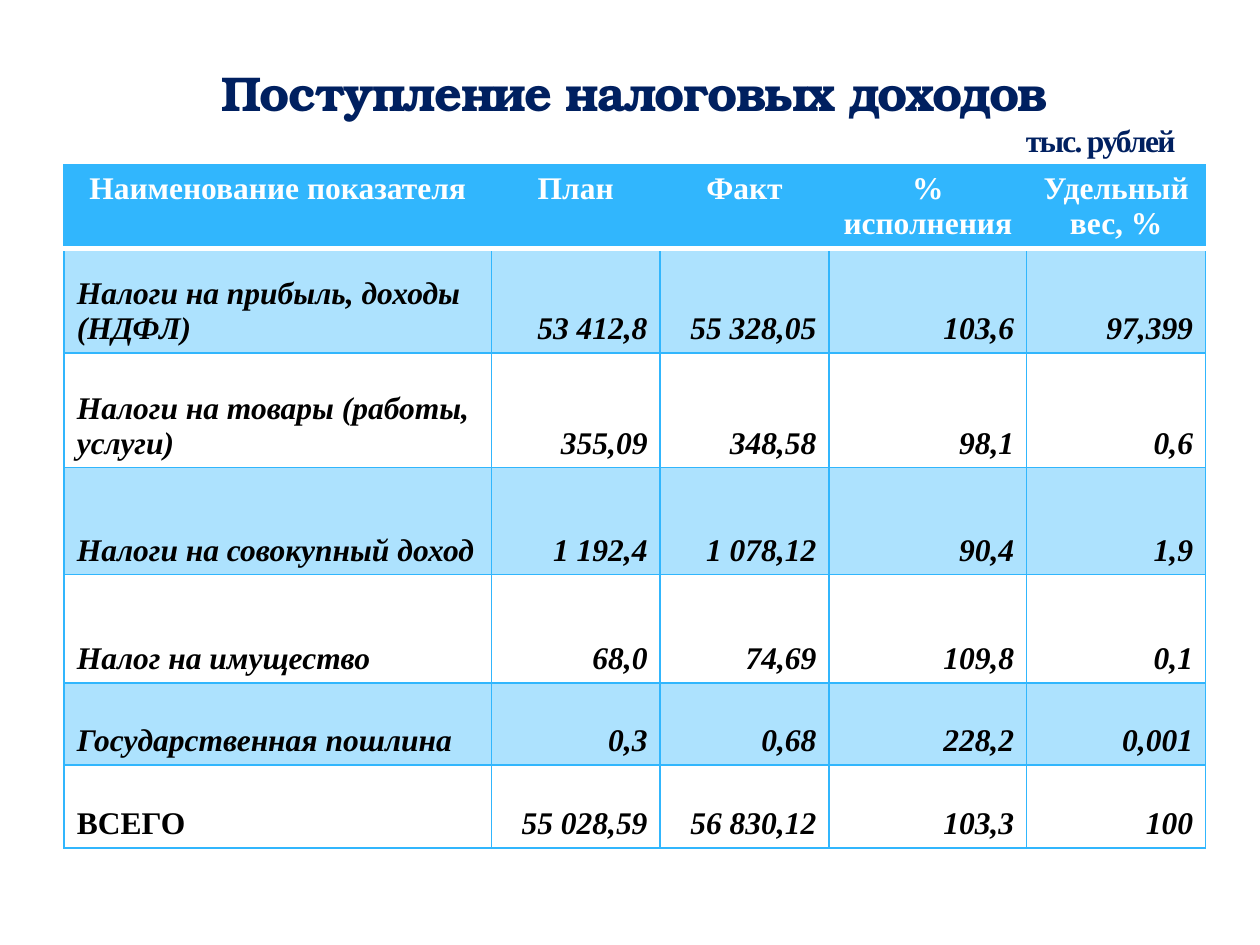
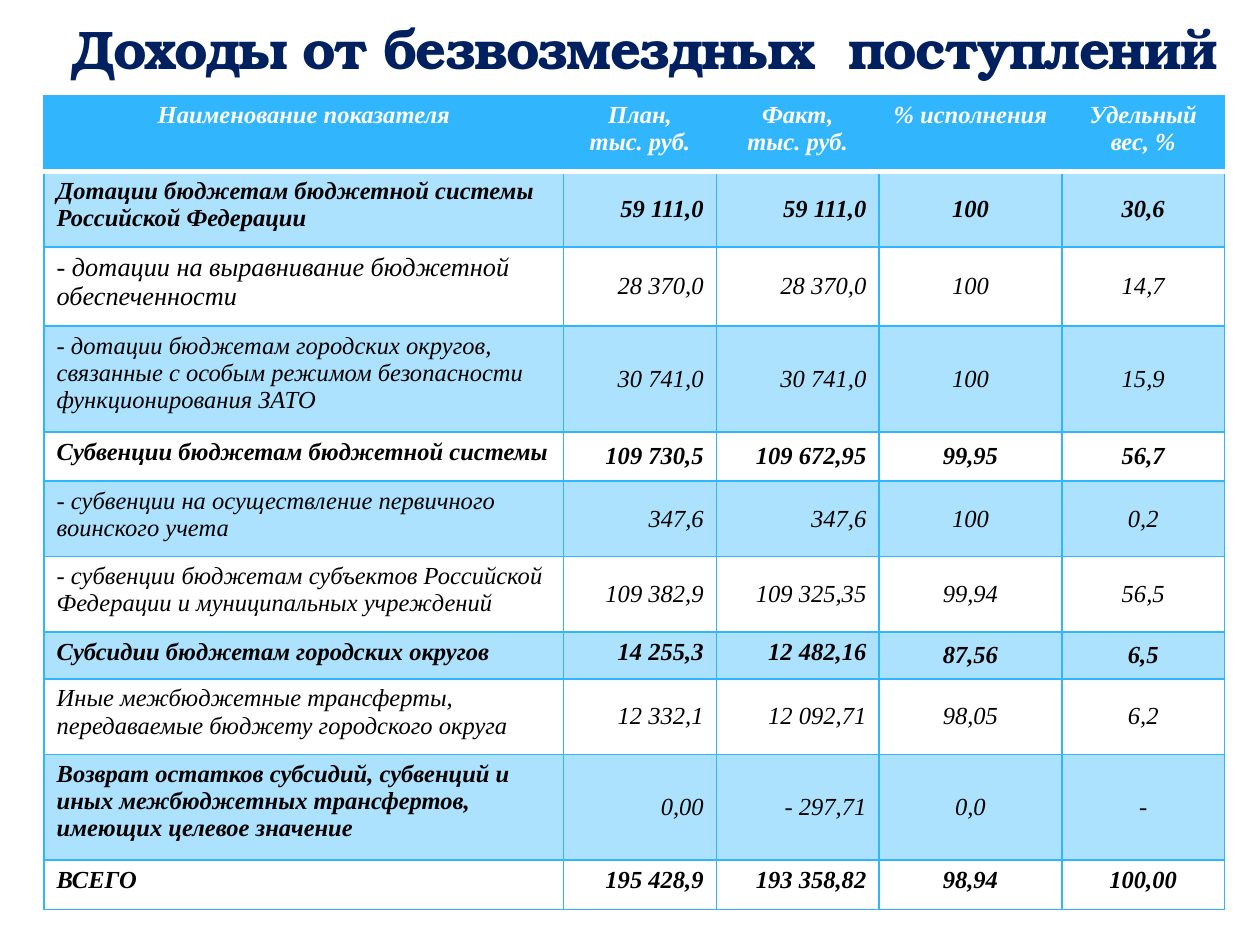
from lxml.etree import SubElement
from pptx import Presentation
from pptx.dml.color import RGBColor
from pptx.enum.text import MSO_ANCHOR, MSO_AUTO_SIZE, PP_ALIGN
from pptx.oxml import parse_xml
from pptx.oxml.ns import nsdecls, qn
from pptx.util import Inches, Pt

# Shared look
SLIDE_WIDTH, SLIDE_HEIGHT = Inches(10), Inches(7.5)
TITLE_ONLY = 5
TITLE_FONT, BODY_FONT = "TeX Gyre Bonum", "Times New Roman"
NAVY = RGBColor(0x00, 0x20, 0x60)
BLUE = RGBColor(0x31, 0xB6, 0xFD)
PALE_BLUE = RGBColor(0xAD, 0xE2, 0xFE)
GLOW = RGBColor(0xAF, 0xCC, 0xDE)
WHITE = RGBColor(0xFF, 0xFF, 0xFF)
BLACK = RGBColor(0x00, 0x00, 0x00)

# Tax revenue: label, plan, fact, execution, share
TAX_HEADER = ("Наименование показателя", "План", "Факт", "% исполнения", "Удельный вес, %")
TAX_ROWS = [
    ("Налоги на прибыль, доходы (НДФЛ)", "53 412,8", "55 328,05", "103,6", "97,399"),
    ("Налоги на товары (работы, услуги)", "355,09", "348,58", "98,1", "0,6"),
    ("Налоги на совокупный доход", "1 192,4", "1 078,12", "90,4", "1,9"),
    ("Налог на имущество", "68,0", "74,69", "109,8", "0,1"),
    ("Государственная пошлина", "0,3", "0,68", "228,2", "0,001"),
    ("ВСЕГО", "55 028,59", "56 830,12", "103,3", "100"),
]
TAX_COLUMN_WEIGHTS = (339, 134, 134, 157, 142)
TAX_ROW_WEIGHTS = (66, 83, 91, 85, 86, 65, 66)

# Grants and transfers
GRANT_HEADER = ("Наименование показателя", "План,\nтыс. руб.", "Факт,\nтыс. руб.",
                "% исполнения", "Удельный вес, %")
GRANT_ROWS = [
    ("Дотации бюджетам бюджетной системы Российской Федерации",
     "59 111,0", "59 111,0", "100", "30,6"),
    ("- дотации на выравнивание бюджетной обеспеченности",
     "28 370,0", "28 370,0", "100", "14,7"),
    ("- дотации бюджетам городских округов, связанные с особым режимом "
     "безопасности функционирования ЗАТО", "30 741,0", "30 741,0", "100", "15,9"),
    ("Субвенции бюджетам бюджетной системы",
     "109 730,5", "109 672,95", "99,95", "56,7"),
    ("- субвенции на осуществление первичного воинского учета",
     "347,6", "347,6", "100", "0,2"),
    ("- субвенции бюджетам субъектов Российской Федерации и муниципальных учреждений",
     "109 382,9", "109 325,35", "99,94", "56,5"),
    ("Субсидии бюджетам городских округов",
     "14 255,3", "12 482,16", "87,56", "6,5"),
    ("Иные межбюджетные трансферты, передаваемые бюджету городского округа",
     "12 332,1", "12 092,71", "98,05", "6,2"),
    ("Возврат остатков субсидий, субвенций и иных межбюджетных трансфертов, "
     "имеющих целевое значение", "0,00", "- 297,71", "0,0", "-"),
    ("ВСЕГО", "195 428,9", "193 358,82", "98,94", "100,00"),
]
GRANT_COLUMN_WEIGHTS = (412, 121, 129, 145, 129)
GRANT_ROW_WEIGHTS = (60, 60, 63, 84, 39, 60, 60, 37, 60, 84, 39)
GROUP_ROWS = (1, 4, 7, 10)
EQUALISATION_ROW, SUBSIDY_ROW, REFUND_ROW, GRANT_TOTAL_ROW = 2, 7, 9, 10


def across(percent):
    return int(SLIDE_WIDTH * percent / 100)


def down(percent):
    return int(SLIDE_HEIGHT * percent / 100)


def format_spans(para, size, font, color, bold=True, italic=False):
    for span in para.runs:
        span.font.size = Pt(size)
        span.font.name = font
        span.font.color.rgb = color
        span.font.bold = bold
        span.font.italic = italic


def tighten(para):
    """Narrow the letter spacing and add a faint hairline outline."""
    for span in para.runs:
        properties = span.font._element
        properties.set("spc", "-100")
        properties.insert(0, parse_xml(
            f'<a:ln {nsdecls("a")} w="3175"><a:solidFill><a:srgbClr val="{GLOW}">'
            '<a:alpha val="25000"/></a:srgbClr></a:solidFill></a:ln>'))


def set_title(slide, left, width, height, lines, anchor, side_margin=0):
    """Fill the title with lines of (text, size, font, alignment)."""
    box = slide.shapes.title
    box.left, box.top, box.width, box.height = left, 0, width, height
    frame = box.text_frame
    frame.text = "\n".join(line[0] for line in lines)
    frame.auto_size = MSO_AUTO_SIZE.NONE
    frame.word_wrap = True
    frame.vertical_anchor = anchor
    frame.margin_left = frame.margin_right = side_margin
    for para, (_, size, font, alignment) in zip(frame.paragraphs, lines):
        para.alignment = alignment
        format_spans(para, size, font, NAVY)
        tighten(para)


def set_border(cell, side, color, points):
    line = SubElement(cell._tc.get_or_add_tcPr(), qn(f"a:{side}"), w=str(Pt(points)))
    fill = SubElement(line, qn("a:solidFill"))
    SubElement(fill, qn("a:srgbClr"), val=str(color))


def frame_cell(cell, row):
    """Draw blue borders, with a thick white rule under the header."""
    white_side = {0: "lnB", 1: "lnT"}.get(row)
    for side in ("lnL", "lnR", "lnT", "lnB"):
        if side == white_side:
            set_border(cell, side, WHITE, 3)
        else:
            set_border(cell, side, BLUE, 1)


def fill_cell(cell, row):
    if row % 2 or row == 0:
        cell.fill.solid()
        cell.fill.fore_color.rgb = PALE_BLUE if row else BLUE
    else:
        cell.fill.background()


def add_budget_table(slide, area, column_weights, row_weights, rows, style_of):
    """Add a table; style_of(row, column) gives alignment, anchor and font settings."""
    left, top, width, height = area
    table = slide.shapes.add_table(len(rows), len(column_weights), *area).table
    for column, weight in zip(table.columns, column_weights):
        column.width = int(width * weight / sum(column_weights))
    for line, weight in zip(table.rows, row_weights):
        line.height = int(height * weight / sum(row_weights))
    for row, values in enumerate(rows):
        for column, value in enumerate(values):
            cell = table.cell(row, column)
            cell.text = value
            frame_cell(cell, row)
            fill_cell(cell, row)
            alignment, anchor, size, bold, italic = style_of(row, column)
            cell.vertical_anchor = anchor
            for para in cell.text_frame.paragraphs:
                para.alignment = alignment
                format_spans(para, size, BODY_FONT, BLACK if row else WHITE, bold, italic)


def tax_style(row, column):
    if row == 0:
        return PP_ALIGN.CENTER, MSO_ANCHOR.TOP, 18, True, False
    alignment = PP_ALIGN.RIGHT if column else PP_ALIGN.LEFT
    is_total_label = row == len(TAX_ROWS) and column == 0
    return alignment, MSO_ANCHOR.BOTTOM, 18, True, not is_total_label


def grant_style(row, column):
    if row == 0:
        return PP_ALIGN.CENTER, MSO_ANCHOR.TOP, 14, True, True
    alignment = (PP_ALIGN.LEFT, PP_ALIGN.RIGHT, PP_ALIGN.RIGHT,
                 PP_ALIGN.CENTER, PP_ALIGN.CENTER)[column]
    at_top = column == 0 or row == GRANT_TOTAL_ROW or (row == SUBSIDY_ROW and column < 3)
    anchor = MSO_ANCHOR.TOP if at_top else MSO_ANCHOR.MIDDLE
    size = 15 if (row, column) == (EQUALISATION_ROW, 0) else 14
    bold = row in GROUP_ROWS or (row, column) == (REFUND_ROW, 0)
    return alignment, anchor, size, bold, True


def add_tax_slide(deck):
    slide = deck.slides.add_slide(deck.slide_layouts[TITLE_ONLY])
    left, width, top = across(5.1), across(90.6), down(17.47)
    add_budget_table(slide, (left, top, width, down(72.27)), TAX_COLUMN_WEIGHTS,
                     TAX_ROW_WEIGHTS, [TAX_HEADER] + TAX_ROWS, tax_style)
    set_title(slide, left, width, top, [
        ("Поступление налоговых доходов", 27.9, TITLE_FONT, PP_ALIGN.CENTER),
        ("тыс. рублей", 18, BODY_FONT, PP_ALIGN.RIGHT),
    ], MSO_ANCHOR.BOTTOM, across(2.4))


def add_grant_slide(deck):
    slide = deck.slides.add_slide(deck.slide_layouts[TITLE_ONLY])
    width, top = across(93.7), down(10.13)
    add_budget_table(slide, (across(3.5), top, width, down(86.13)), GRANT_COLUMN_WEIGHTS,
                     GRANT_ROW_WEIGHTS, [GRANT_HEADER] + GRANT_ROWS, grant_style)
    set_title(slide, across(4.3), width, top, [
        ("Доходы от безвозмездных  поступлений", 31, TITLE_FONT, PP_ALIGN.CENTER),
    ], MSO_ANCHOR.MIDDLE)


def main():
    deck = Presentation()
    deck.slide_width, deck.slide_height = SLIDE_WIDTH, SLIDE_HEIGHT
    add_tax_slide(deck)
    add_grant_slide(deck)
    deck.save("out.pptx")


if __name__ == "__main__":
    main()
